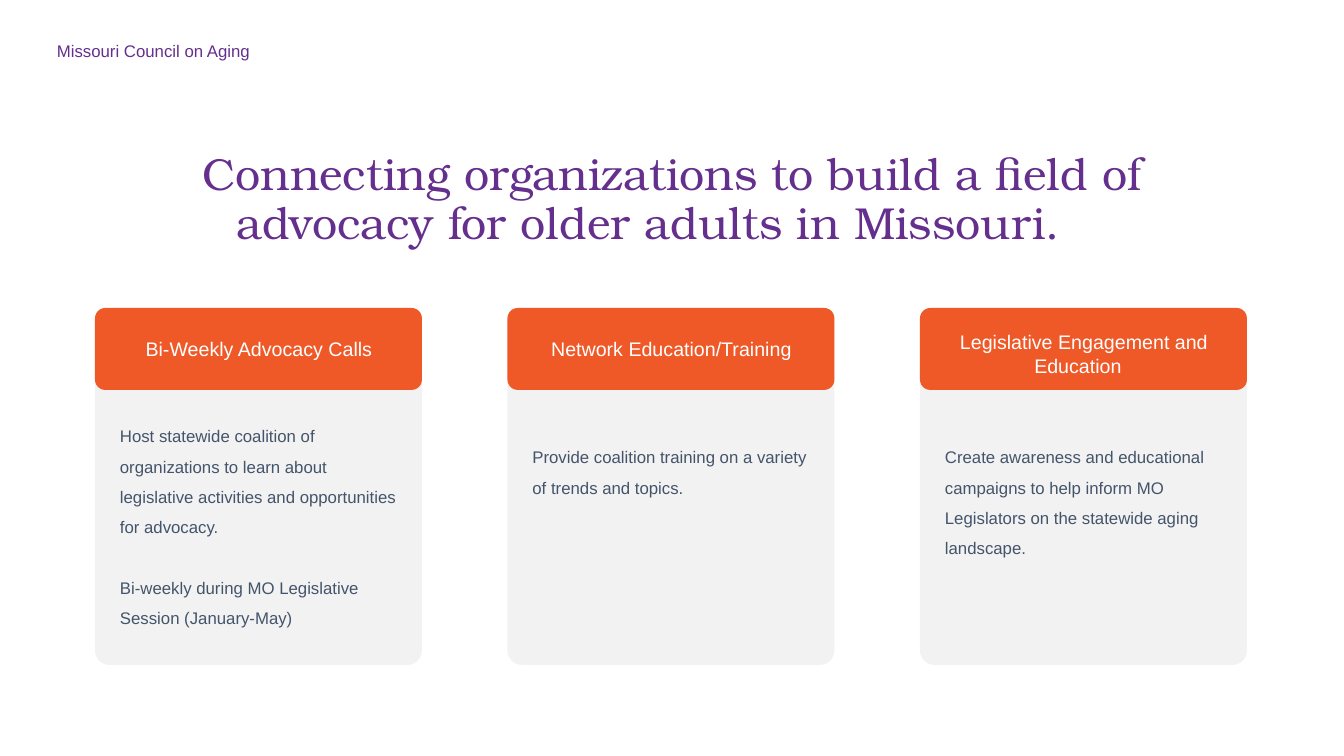
from pptx import Presentation
from pptx.dml.color import RGBColor
from pptx.enum.shapes import MSO_SHAPE
from pptx.enum.text import MSO_ANCHOR, PP_ALIGN
from pptx.util import Emu, Pt

ROUNDED = MSO_SHAPE.ROUNDED_RECTANGLE
LEFT, CENTER = PP_ALIGN.LEFT, PP_ALIGN.CENTER
TOP, MIDDLE = MSO_ANCHOR.TOP, MSO_ANCHOR.MIDDLE

# Content
ORGANIZATION = "Missouri Council on Aging"
TITLE = "Connecting organizations to build a field of advocacy for older adults in Missouri."
# Boxes are (top, height); stagger moves the first line right of the next one
CARDS = [
    {
        "heading": "Bi-Weekly Advocacy Calls",
        "heading_box": (332, 34),
        "stagger": 0,
        "body": [
            "Host statewide coalition of organizations to learn about legislative "
            "activities and opportunities for advocacy.",
            "Bi-weekly during MO Legislative Session (January-May)",
        ],
        "body_box": (411, 220),
    },
    {
        "heading": "Network Education/Training",
        "heading_box": (332, 34),
        "stagger": 0,
        "body": ["Provide coalition training on a variety of trends and topics."],
        "body_box": (432, 129),
    },
    {
        "heading": "Legislative Engagement and Education",
        "heading_box": (325, 57),
        "stagger": 12,
        "body": [
            "Create awareness and educational campaigns to help inform MO "
            "Legislators on the statewide aging landscape.",
        ],
        "body_box": (432, 129),
    },
]

# Style
COLORS = {
    "purple": "652F8D",
    "orange": "EF5928",
    "panel": "F2F2F2",
    "slate": "44546A",
    "white": "FFFFFF",
}
FORMATS = {
    "title": {"name": "TeX Gyre Bonum", "size": Pt(32), "color": "purple"},
    "organization": {"name": "Arial", "size": Pt(12), "color": "purple"},
    "heading": {"name": "Arial", "size": Pt(14), "color": "white"},
    "body": {"name": "Arial", "size": Pt(12), "color": "slate"},
}
PARAGRAPHS = {
    "title": {"alignment": CENTER, "line_spacing": 0.9},
    "organization": {"alignment": LEFT},
    "heading": {"alignment": CENTER},
    "body": {"alignment": LEFT, "line_spacing": 1.5},
}

# Layout in px
PX_PER_INCH = 100.8
SLIDE_SIZE = (1344, 756)
CARD_LEFT, CARD_TOP, CARD_WIDTH, CARD_HEIGHT = 95, 308, 327, 357
LAST_CARD_LEFT = 920
HEADER_HEIGHT = 82
TEXT_INSET, TEXT_WIDTH = 15, 298
SIDE_MARGIN = 10


def px(value):
    return Emu(round(value * 914400 / PX_PER_INCH))


def rgb(name):
    return RGBColor.from_string(COLORS[name])


def add_panel(slide, box, color, corner):
    shape = slide.shapes.add_shape(ROUNDED, *map(px, box))
    shape.adjustments[0] = corner
    shape.shadow.inherit = False
    shape.fill.solid()
    shape.fill.fore_color.rgb = rgb(color)
    shape.line.fill.background()


def add_text(slide, box, lines, style, anchor=TOP, stagger=0, wrap=True):
    frame = slide.shapes.add_textbox(*map(px, box)).text_frame
    frame.word_wrap = wrap
    frame.vertical_anchor = anchor
    frame.margin_right = px(SIDE_MARGIN + stagger)
    for index, line in enumerate(lines):
        paragraph = frame.paragraphs[0] if index == 0 else frame.add_paragraph()
        paragraph.text = line
        if stagger:
            paragraph._p.get_or_add_pPr().set("indent", str(px(stagger * 2)))
            frame.margin_right = px(SIDE_MARGIN + stagger * 2)
        for key, value in PARAGRAPHS[style].items():
            setattr(paragraph, key, value)
        if index:
            paragraph.space_before = Pt(21.6)
        font = paragraph.runs[0].font
        for key, value in FORMATS[style].items():
            if key == "color":
                font.color.rgb = rgb(value)
            else:
                setattr(font, key, value)


def main():
    presentation = Presentation()
    presentation.slide_width, presentation.slide_height = map(px, SLIDE_SIZE)
    slide = presentation.slides.add_slide(presentation.slide_layouts[6])

    # Title and organization name
    add_text(slide, (111, 136, 1123, 129), [TITLE], "title", MIDDLE, stagger=24)
    add_text(slide, (47, 36, 215, 30), [ORGANIZATION], "organization", wrap=False)

    # Cards at an equal pitch
    pitch = (LAST_CARD_LEFT - CARD_LEFT) / (len(CARDS) - 1)
    for index, card in enumerate(CARDS):
        left = CARD_LEFT + index * pitch
        add_panel(slide, (left, CARD_TOP, CARD_WIDTH, CARD_HEIGHT), "panel", 0.045)
        add_panel(slide, (left, CARD_TOP, CARD_WIDTH, HEADER_HEIGHT), "orange", 0.126)
        for part, lines, stagger in (
            ("heading", [card["heading"]], card["stagger"] / 2),
            ("body", card["body"], 0),
        ):
            top, height = card[part + "_box"]
            box = (left + TEXT_INSET, top, TEXT_WIDTH, height)
            add_text(slide, box, lines, part, stagger=stagger)

    presentation.save("out.pptx")


if __name__ == "__main__":
    main()
